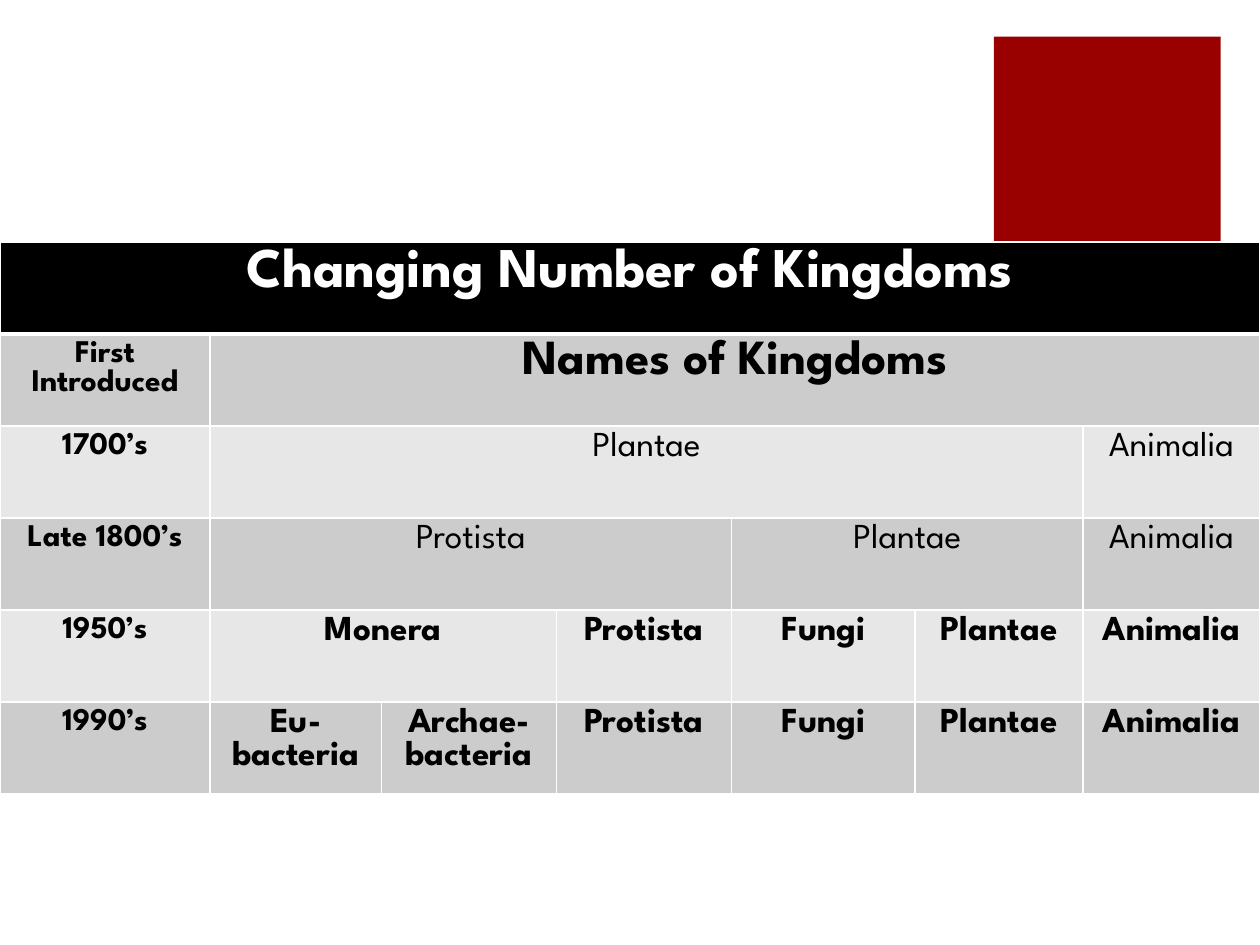
from lxml import etree
from pptx import Presentation
from pptx.dml.color import RGBColor
from pptx.enum import shapes, text
from pptx.oxml import ns
from pptx.util import Pt

FONT = "League Spartan"
RED = RGBColor(0x99, 0x00, 0x00)
BLACK = RGBColor(0x00, 0x00, 0x00)
WHITE = RGBColor(0xFF, 0xFF, 0xFF)
DARK = RGBColor(0xCC, 0xCC, 0xCC)
LIGHT = RGBColor(0xE7, 0xE7, 0xE7)

COLS = [120, 98, 100, 100, 105, 96, 101]
ROW_H = 52.6

# Each row: fill, font colour, cells of (text, columns spanned, size, bold)
ROWS = [
    (BLACK, WHITE, [("Changing Number of Kingdoms", 7, 32, True)]),
    (DARK, BLACK, [("First Introduced", 1, 18, True), ("Names of Kingdoms", 6, 28, True)]),
    (LIGHT, BLACK, [("1700’s", 1, 18, True), ("Plantae", 5, 20, False),
                    ("Animalia", 1, 20, False)]),
    (DARK, BLACK, [("Late 1800’s", 1, 18, True), ("Protista", 3, 20, False),
                   ("Plantae", 2, 20, False), ("Animalia", 1, 20, False)]),
    (LIGHT, BLACK, [("1950’s", 1, 18, True), ("Monera", 2, 20, True),
                    ("Protista", 1, 20, True), ("Fungi", 1, 20, True),
                    ("Plantae", 1, 20, True), ("Animalia", 1, 20, True)]),
    (DARK, BLACK, [("1990’s", 1, 18, True), ("Eu-bacteria", 1, 20, True),
                   ("Archae-bacteria", 1, 20, True), ("Protista", 1, 20, True),
                   ("Fungi", 1, 20, True), ("Plantae", 1, 20, True),
                   ("Animalia", 1, 20, True)]),
]


def style_cell(cell, fill, top, bottom):
    """Give a cell white borders of the given widths and a solid fill."""
    tc_pr = cell._tc.get_or_add_tcPr()
    for side, width in (("L", 1), ("R", 1), ("T", top), ("B", bottom)):
        ln = etree.SubElement(tc_pr, ns.qn(f"a:ln{side}"), w=str(Pt(width)))
        solid = etree.SubElement(ln, ns.qn("a:solidFill"))
        etree.SubElement(solid, ns.qn("a:srgbClr"), val=str(WHITE))
    cell.fill.solid()
    cell.fill.fore_color.rgb = fill


def write_cell(cell, words, size, bold, color):
    """Write one centred run into a cell."""
    p = cell.text_frame.paragraphs[0]
    p.alignment = text.PP_ALIGN.CENTER
    r = p.add_run()
    r.text = words
    r.font.name = FONT
    r.font.size = Pt(size)
    r.font.bold = bold
    r.font.color.rgb = color


def add_accent(s, left, top, width, height):
    """Draw the plain red square in the given box."""
    sp = s.shapes.add_shape(shapes.MSO_SHAPE.RECTANGLE,
                            Pt(left), Pt(top), Pt(width), Pt(height))
    sp.shadow.inherit = False
    sp.fill.solid()
    sp.fill.fore_color.rgb = RED
    sp.line.fill.background()


def add_kingdoms(s, left, top):
    """Build the table of kingdoms from its top left corner."""
    tbl = s.shapes.add_table(len(ROWS), len(COLS), Pt(left), Pt(top),
                             Pt(sum(COLS)), Pt(ROW_H * len(ROWS))).table
    for col, width in zip(tbl.columns, COLS):
        col.width = Pt(width)
    for i, (fill, color, cells) in enumerate(ROWS):
        tbl.rows[i].height = Pt(ROW_H)
        for j in range(len(COLS)):
            style_cell(tbl.cell(i, j), fill, 3 if i == 1 else 1, 3 if i == 0 else 1)
        j = 0
        for words, span, size, bold in cells:
            cell = tbl.cell(i, j)
            if span > 1:
                cell.merge(tbl.cell(i, j + span - 1))
            write_cell(cell, words, size, bold, color)
            j += span


def main():
    """Build and save the slide."""
    prs = Presentation()
    prs.slide_width, prs.slide_height = Pt(720), Pt(540)
    s = prs.slides.add_slide(prs.slide_layouts[6])
    add_accent(s, 568, 21, 129.6, 129.6)
    add_kingdoms(s, 0, 138.2)
    prs.save("out.pptx")


if __name__ == "__main__":
    main()
